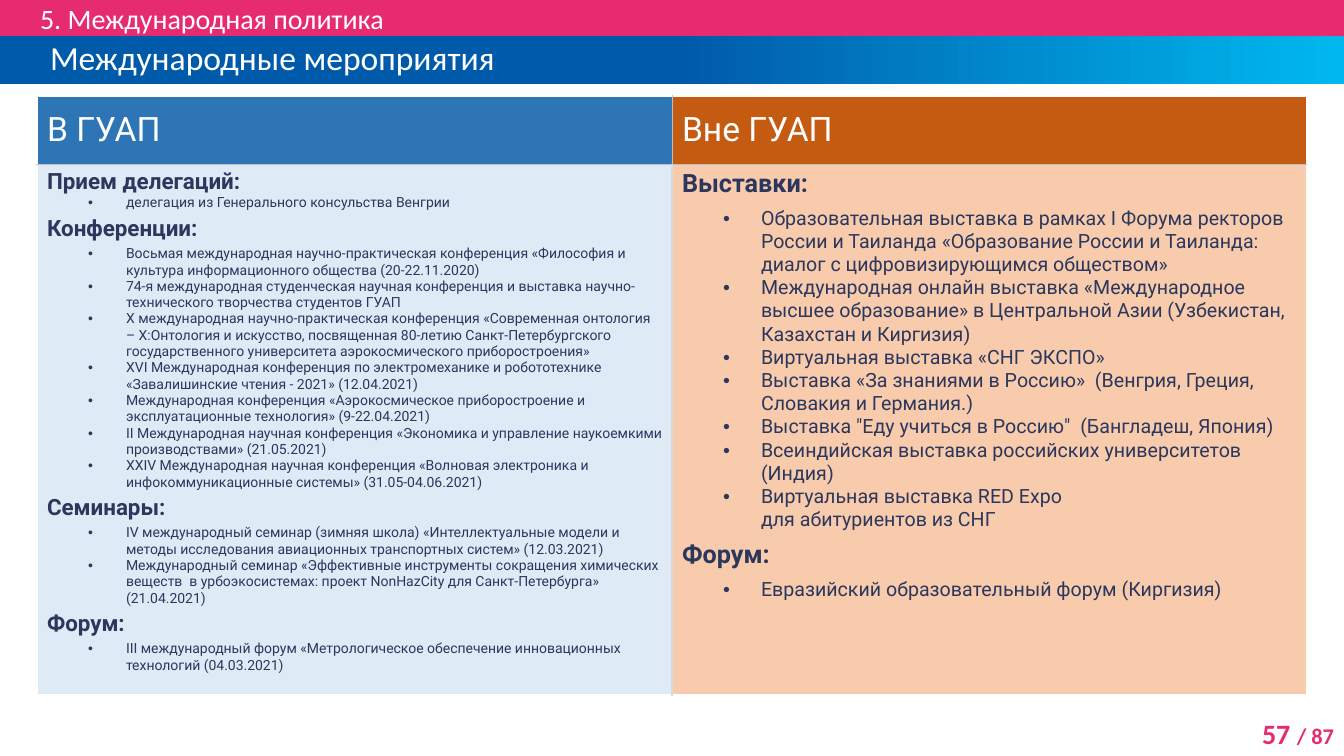
"""Build the slide on international events inside and outside the university."""
from copy import deepcopy

from lxml import etree
from pptx import Presentation
from pptx.dml.color import RGBColor
from pptx.enum.text import MSO_ANCHOR, MSO_AUTO_SIZE, PP_ALIGN
from pptx.oxml.ns import qn
from pptx.util import Emu, Pt

LEFT, RIGHT = PP_ALIGN.LEFT, PP_ALIGN.RIGHT
TOP, MIDDLE = MSO_ANCHOR.TOP, MSO_ANCHOR.MIDDLE
FIXED = MSO_AUTO_SIZE.NONE

COLORS = {
    "pink": "E72B70", "blue": "005AAA", "sky": "00B8EE", "white": "FFFFFF",
    "ink": "2B375C", "line": "BFBFBF", "pale": "D9D9D9",
    "head_in": "2E75B6", "head_out": "C55A11",
    "body_in": "DEEBF7", "body_out": "F8CBAD",
}
SECTION = "5. Международная политика"
TITLE = "Международные мероприятия"
PAGE = [("57 ", 20), ("/ 87", 16)]
INSIDE = [
    ("Прием делегаций:", ["делегация из Генерального консульства Венгрии"]),
    ("Конференции:", [
        "Восьмая международная научно-практическая конференция «Философия и культура информационного общества (20-22.11.2020)",
        "74-я международная студенческая научная конференция и выставка научно-технического творчества студентов ГУАП",
        "X международная научно-практическая конференция «Современная онтология – Х:Онтология и искусство, посвященная 80-летию Санкт-Петербургского государственного университета аэрокосмического приборостроения»",
        "XVI Международная конференция по электромеханике и робототехнике «Завалишинские чтения - 2021» (12.04.2021)",
        "Международная конференция «Аэрокосмическое приборостроение и эксплуатационные технология» (9-22.04.2021)",
        "II Международная научная конференция «Экономика и управление наукоемкими производствами» (21.05.2021)",
        "XXIV Международная научная конференция «Волновая электроника и инфокоммуникационные системы» (31.05-04.06.2021)",
    ]),
    ("Семинары:", [
        "IV международный семинар (зимняя школа) «Интеллектуальные модели и методы исследования авиационных транспортных систем» (12.03.2021)",
        "Международный семинар «Эффективные инструменты сокращения химических веществ  в урбоэкосистемах: проект NonHazCity для Санкт-Петербурга» (21.04.2021)",
    ]),
    ("Форум:", [
        "III международный форум «Метрологическое обеспечение инновационных технологий (04.03.2021)",
    ]),
]
OUTSIDE = [
    ("Выставки:", [
        "Образовательная выставка в рамках I Форума ректоров России и Таиланда «Образование России и Таиланда: диалог с цифровизирующимся обществом»",
        "Международная онлайн выставка «Международное высшее образование» в Центральной Азии (Узбекистан, Казахстан и Киргизия)",
        "Виртуальная выставка «СНГ ЭКСПО»",
        "Выставка «За знаниями в Россию»  (Венгрия, Греция, Словакия и Германия.)",
        "Выставка \"Еду учиться в Россию\"  (Бангладеш, Япония)",
        "Всеиндийская выставка российских университетов (Индия)",
        "Виртуальная выставка RED Expo \nдля абитуриентов из СНГ",
    ]),
    ("Форум:", ["Евразийский образовательный форум (Киргизия)"]),
]
COLUMNS = [
    dict(name="В ГУАП", groups=INSIDE, tone="in", head=16, item=10, gap=3, first=0),
    dict(name="Вне ГУАП", groups=OUTSIDE, tone="out", head=18, item=14, gap=6, first=6),
]
WIDTH, HEIGHT = 1344, 756
BAR, BAND = 36, 48
EDGE, TABLE_TOP, ROWS = 37, 96, (68, 531)
INDENT, HANG = 79, -38


def px(n):
    return Emu(round(n * 12192000 / WIDTH))


def rgb(name):
    return RGBColor.from_string(COLORS[name])


def write(para, text, size, color="white", font="Roboto", bold=False, align=LEFT,
          before=0, after=0, margin=0, hang=0, bullet=None, leading=None):
    para.alignment = align
    para.space_before, para.space_after = Pt(before), Pt(after)
    para.line_spacing = Pt(leading) if leading else 1.0
    props = para._p.get_or_add_pPr()
    if not props.get("marL"):
        props.set("marL", str(px(margin)))
        props.set("indent", str(px(hang)))
        if bullet:
            etree.SubElement(props, qn("a:buFont")).set("typeface", "Arial")
            etree.SubElement(props, qn("a:buChar")).set("char", bullet)
    for i, part in enumerate(text.split("\n")):
        if i:
            para.add_line_break()
        run = para.add_run()
        run.text = part
        run.font.size, run.font.name, run.font.bold = Pt(size), font, bold
        run.font.color.rgb = rgb(color)


def place(shape, top, height, side):
    shape.left, shape.top = px(0), px(top)
    shape.width, shape.height = px(WIDTH), px(height)
    frame = shape.text_frame
    frame.auto_size, frame.word_wrap = FIXED, True
    frame.vertical_anchor = MIDDLE
    frame.margin_left = frame.margin_right = px(side)
    frame.margin_top = frame.margin_bottom = 0
    return frame.paragraphs[0]


def blend(shape, stops):
    shape.fill.gradient()
    shape.fill.gradient_angle = 0
    marks = shape._element.spPr.find(".//" + qn("a:gsLst"))
    marks.insert(1, deepcopy(marks[0]))
    for stop, (pos, color) in zip(shape.fill.gradient_stops, stops):
        stop.position, stop.color.rgb = pos, rgb(color)


def rule(cell, sides):
    props = cell._tc.get_or_add_tcPr()
    for i, (side, color, width) in enumerate(sides):
        line = etree.Element(qn("a:ln" + side), w=str(Pt(width)))
        fill = etree.SubElement(line, qn("a:solidFill"))
        etree.SubElement(fill, qn("a:srgbClr")).set("val", COLORS[color])
        props.insert(i, line)


def paint(cell, color, anchor):
    cell.fill.solid()
    cell.fill.fore_color.rgb = rgb(color)
    cell.vertical_anchor = anchor
    return cell.text_frame


def list_events(frame, col):
    para = frame.paragraphs[0]
    for i, (head, items) in enumerate(col["groups"]):
        if i:
            para = frame.add_paragraph()
        write(para, head, col["head"], "ink", bold=True,
              before=col["gap"] if i else 0, after=col["gap"] if i else col["first"])
        for item in items:
            write(frame.add_paragraph(), item, col["item"], "ink",
                  margin=INDENT, hang=HANG, bullet="•")


def main():
    deck = Presentation()
    deck.slide_width, deck.slide_height = px(WIDTH), px(HEIGHT)
    slide = deck.slides.add_slide(deck.slide_layouts[0])

    title, section = slide.shapes.title, slide.placeholders[1]
    section.fill.solid()
    section.fill.fore_color.rgb = rgb("pink")
    write(place(section, 0, BAR, 0), SECTION, 20, font="Calibri", margin=40)
    blend(title, [(0, "blue"), (0.5, "blue"), (1, "sky")])
    write(place(title, BAR, BAND, 10), TITLE, 24, font="Calibri", margin=40, leading=24)

    page = slide.shapes.add_textbox(px(1223), px(712), px(121), px(44)).text_frame
    page.word_wrap = True
    for text, size in PAGE:
        write(page.paragraphs[0], text, size, "pink", "Calibri", bold=True, align=RIGHT)

    table = slide.shapes.add_table(2, 2, px(EDGE), px(TABLE_TOP),
                                   px(WIDTH - 2 * EDGE), px(sum(ROWS))).table
    for row, height in zip(table.rows, ROWS):
        row.height = px(height)
    for i, col in enumerate(COLUMNS):
        head, body = table.cell(0, i), table.cell(1, i)
        frame = paint(head, "head_" + col["tone"], MIDDLE)
        write(frame.paragraphs[0], col["name"], 24)
        list_events(paint(body, "body_" + col["tone"], TOP), col)
        inner = "L" if i else "R"
        rule(head, [(inner, "line", 0.5), ("B", "line", 0.5)])
        rule(body, [(inner, "pale", 1), ("T", "line", 0.5)])
    deck.save("out.pptx")


if __name__ == "__main__":
    main()
